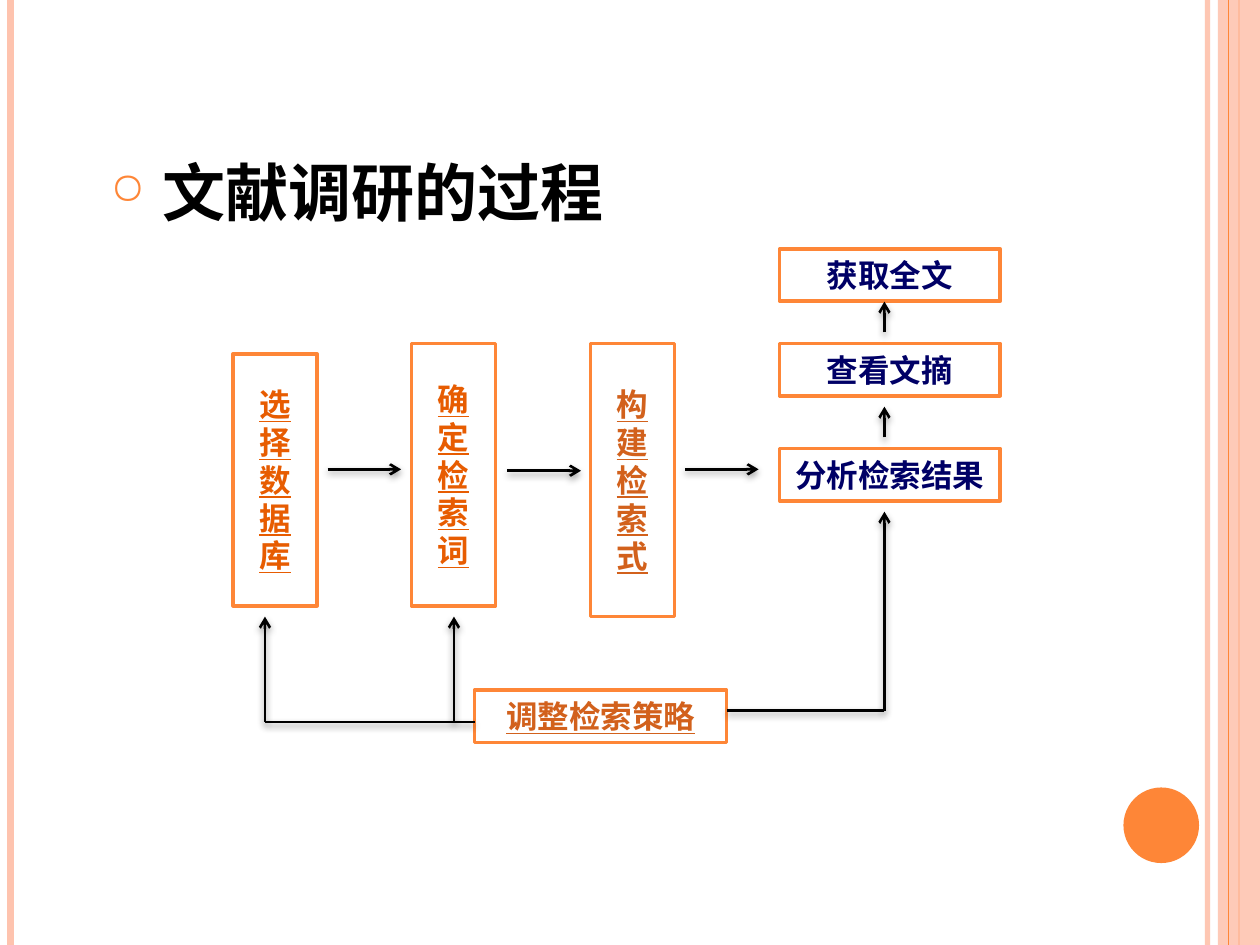
from dataclasses import dataclass

from lxml import etree
from pptx import Presentation
from pptx.dml.color import RGBColor
from pptx.enum.shapes import MSO_CONNECTOR, MSO_SHAPE
from pptx.enum.text import MSO_ANCHOR, PP_ALIGN
from pptx.oxml.ns import qn
from pptx.util import Pt

STRAIGHT = MSO_CONNECTOR.STRAIGHT
RECTANGLE = MSO_SHAPE.RECTANGLE
ELLIPSE = MSO_SHAPE.OVAL
PROCESS = MSO_SHAPE.FLOWCHART_PROCESS
MIDDLE = MSO_ANCHOR.MIDDLE
TOP = MSO_ANCHOR.TOP
CENTER = PP_ALIGN.CENTER
LEFT = PP_ALIGN.LEFT


@dataclass(frozen=True)
class Theme:
    accent: str = "FE8637"
    pale: str = "FEC3AE"
    white: str = "FFFFFF"
    black: str = "000000"
    orange: str = "E75C01"
    rust: str = "D2611C"
    navy: str = "000066"
    title_font: str = "Cambria"
    box_font: str = "Arial"
    title_size: float = 36
    box_size: float = 18
    box_line: float = 2
    arrow_line: float = 1.5


THEME = Theme()


@dataclass(frozen=True)
class Box:
    text: str
    left: float
    top: float
    width: float
    height: float
    color: str
    underline: bool = False


@dataclass(frozen=True)
class Line:
    start: tuple[float, float]
    end: tuple[float, float]
    color: str = THEME.black
    width: float = THEME.arrow_line
    arrow: bool = False
    shadow: bool = False
    opacity: int = 100


def add_child(parent, tag: str, **attributes):
    values = {name: str(value) for name, value in attributes.items()}
    return etree.SubElement(parent, qn(tag), values)


def set_opacity(properties, percent: int) -> None:
    color = next(properties.iter(qn("a:srgbClr")))
    add_child(color, "a:alpha", val=percent * 1000)


def write_text(shape, text: str, *, font: str, size: float, color: str,
               underline: bool = False, align=CENTER, anchor=MIDDLE):
    frame = shape.text_frame
    frame.word_wrap = True
    frame.vertical_anchor = anchor
    paragraph = frame.paragraphs[0]
    paragraph.alignment = align
    run = paragraph.add_run()
    run.text = text
    run.font.name = font
    run.font.size = Pt(size)
    run.font.bold = True
    run.font.underline = underline
    run.font.color.rgb = RGBColor.from_string(color)
    return paragraph


def add_filled(slide, kind, left: float, top: float, width: float,
               height: float, fill: str):
    shape = slide.shapes.add_shape(kind, Pt(left), Pt(top), Pt(width), Pt(height))
    shape.shadow.inherit = False
    shape.fill.solid()
    shape.fill.fore_color.rgb = RGBColor.from_string(fill)
    shape.line.fill.background()
    return shape


def draw_box(slide, box: Box) -> None:
    shape = add_filled(slide, PROCESS, box.left, box.top, box.width,
                       box.height, THEME.white)
    shape.line.color.rgb = RGBColor.from_string(THEME.accent)
    shape.line.width = Pt(THEME.box_line)
    write_text(shape, box.text, font=THEME.box_font, size=THEME.box_size,
               color=box.color, underline=box.underline)


def draw_line(slide, line: Line) -> None:
    points = [Pt(value) for value in (*line.start, *line.end)]
    connector = slide.shapes.add_connector(STRAIGHT, *points)
    connector.line.color.rgb = RGBColor.from_string(line.color)
    connector.line.width = Pt(line.width)
    properties = connector._element.spPr
    if line.opacity < 100:
        set_opacity(properties, line.opacity)
    if line.arrow:
        add_child(properties.find(qn("a:ln")), "a:tailEnd", type="arrow")
    effects = add_child(properties, "a:effectLst")
    if line.shadow:
        shadow = add_child(effects, "a:outerShdw", blurRad=Pt(4), dist=Pt(2),
                           dir=90 * 60000, rotWithShape=0)
        color = add_child(shadow, "a:srgbClr", val=THEME.black)
        add_child(color, "a:alpha", val=40000)


def draw_frame(slide, height: float) -> None:
    def stripe(x: float, color: str, width: float, opacity: int = 100) -> None:
        draw_line(slide, Line((x, 0), (x, height), color, width, opacity=opacity))

    stripe(690, THEME.pale, 3, 93)
    stripe(6, THEME.pale, 4.5)
    stripe(708, THEME.accent, 1.5)
    band = add_filled(slide, RECTANGLE, 696, 0, 24, height, THEME.pale)
    set_opacity(band._element.spPr, 87)
    stripe(702, THEME.accent, 0.75)
    add_filled(slide, ELLIPSE, 642, 450, 43.2, 43.2, THEME.accent)


def draw_title(slide) -> None:
    title = slide.shapes.add_textbox(Pt(56), Pt(84), Pt(588), Pt(384))
    paragraph = write_text(title, " 文献调研的过程", font=THEME.title_font,
                           size=THEME.title_size, color=THEME.black,
                           align=LEFT, anchor=TOP)
    paragraph.space_before = Pt(6)
    properties = paragraph._p.get_or_add_pPr()
    properties.set("marL", str(Pt(21.6)))
    properties.set("indent", str(Pt(-21.6)))
    bullet_color = add_child(properties, "a:buClr")
    add_child(bullet_color, "a:srgbClr", val=THEME.accent)
    add_child(properties, "a:buSzPct", val=70000)
    add_child(properties, "a:buChar", char="○")


def draw_process(slide) -> None:
    column_width, row_height, result_left, result_width = 48, 30, 445.5, 126
    boxes = [
        Box("选择数据库", 133.2, 202.2, column_width, 144, THEME.orange, True),
        Box("确定检索词", 235.2, 196.2, column_width, 150, THEME.orange, True),
        Box("构建检索式", 337.4, 196.2, column_width, 156, THEME.rust, True),
        Box("调整检索策略", 271.2, 394.2, 144, row_height, THEME.rust, True),
    ]
    results = [("获取全文", 142.2), ("查看文摘", 196.2), ("分析检索结果", 256.2)]
    boxes += [Box(text, result_left, top, result_width, row_height, THEME.navy)
              for text, top in results]
    for box in boxes:
        draw_box(slide, box)

    steps = [((x, y), (x + 42, y))
             for x, y in ((187.2, 268.2), (290, 269), (391.5, 268.2))]
    result_x, feedback_y, return_y = 505.4, 406.2, 412.5
    rises = [((x, bottom), (x, top)) for x, bottom, top in (
        (result_x, 250, 232.4), (result_x, 190, 172.4),
        (result_x, feedback_y, 292.4),
        (259.4, return_y, 352.4), (151.4, return_y, 352.4))]
    for start, end in steps + rises:
        draw_line(slide, Line(start, end, arrow=True, shadow=True))
    draw_line(slide, Line((151.4, return_y), (271.2, return_y), shadow=True))
    draw_line(slide, Line((result_x, feedback_y), (415.2, feedback_y), shadow=True))


def main() -> None:
    presentation = Presentation()
    presentation.slide_width = Pt(720)
    presentation.slide_height = Pt(540)
    slide = presentation.slides.add_slide(presentation.slide_layouts[6])
    draw_frame(slide, 540)
    draw_title(slide)
    draw_process(slide)
    presentation.save("out.pptx")


if __name__ == "__main__":
    main()
